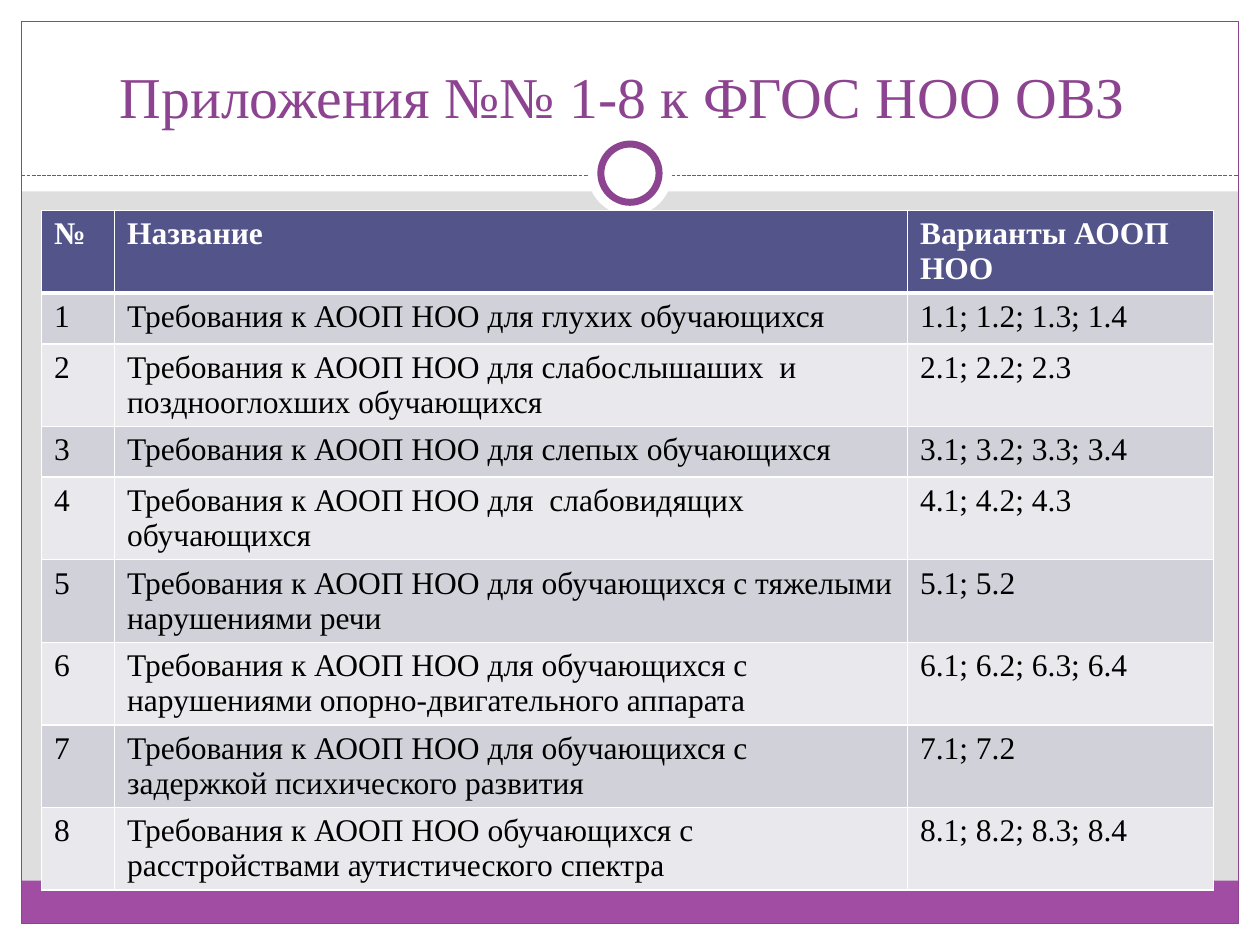
import pptx
import pptx.dml.color
import pptx.enum.dml
import pptx.enum.shapes
import pptx.enum.text
import pptx.oxml.ns
import pptx.util
import lxml.etree

WIDTH, HEIGHT, MARGIN = 10, 7.5, 0.17
FONT = "Times New Roman"
SHORT_ROW, TALL_ROW = 29, 47.2
COLORS = {
    "background": "DEDEDE",
    "white": "FFFFFF",
    "black": "000000",
    "frame": "8D4490",
    "footer": "A04DA3",
    "header": "53548A",
    "odd": "D1D1DA",
    "even": "E9E9ED",
}
TITLE = "Приложения №№ 1-8 к ФГОС НОО ОВЗ "
HEADINGS = ("№", "Название", "Варианты АООП НОО")
REQUIREMENT = "Требования к АООП НОО "
APPENDICES = (
    ("для глухих обучающихся", 4),
    ("для слабослышаших  и позднооглохших обучающихся", 3),
    ("для слепых обучающихся", 4),
    ("для  слабовидящих обучающихся", 3),
    ("для обучающихся с тяжелыми нарушениями речи", 2),
    ("для обучающихся с нарушениями опорно-двигательного аппарата", 4),
    ("для обучающихся с задержкой психического развития", 2),
    ("обучающихся с расстройствами аутистического спектра", 4),
)
SHORT_ROWS = (1, 3)


def color(name):
    """Return the named colour of the palette."""
    return pptx.dml.color.RGBColor.from_string(COLORS[name])


def inches(box):
    """Convert lengths in inches to slide units."""
    return [pptx.util.Inches(length) for length in box]


def add_shape(page, kind, box, fill=None, line=None, weight=0.75):
    """Add a flat preset shape with optional fill and outline."""
    shape = page.shapes.add_shape(kind, *inches(box))
    shape.shadow.inherit = False
    if fill:
        shape.fill.solid()
        shape.fill.fore_color.rgb = color(fill)
    else:
        shape.fill.background()
    if line:
        shape.line.color.rgb = color(line)
        shape.line.width = pptx.util.Pt(weight)
    else:
        shape.line.fill.background()


def style_text(frame, size, shade, bold=False):
    """Format every run of a text frame."""
    for para in frame.paragraphs:
        for span in para.runs:
            span.font.name = FONT
            span.font.size = pptx.util.Pt(size)
            span.font.bold = bold
            span.font.color.rgb = color(shade)


def add_frame(page, box, band, footer):
    """Draw the white margins, the footer bar and the outline."""
    left, top, width, height = box
    rectangle = pptx.enum.shapes.MSO_SHAPE.RECTANGLE
    inner = (left + MARGIN, top + MARGIN, width - 2 * MARGIN, height - 2 * MARGIN)
    bottom = top + height - MARGIN
    for part in (
        (left, bottom, width, MARGIN),
        (left, top, width, band),
        (left, top, MARGIN, height),
        (left + width - MARGIN, top, MARGIN, height),
    ):
        add_shape(page, rectangle, part, "white")
    add_shape(page, rectangle, (inner[0], bottom - footer, inner[2], footer), "footer")
    add_shape(page, rectangle, inner, line="frame")


def add_divider(page, box):
    """Draw a dashed rule with a ring centred just above its middle."""
    left, top, width, height = box
    rule = page.shapes.add_connector(
        pptx.enum.shapes.MSO_CONNECTOR.STRAIGHT,
        *inches((left, top + height / 2, left + width, top + height / 2)),
    )
    rule.line.color.rgb = color("frame")
    rule.line.width = pptx.util.Pt(0.75)
    rule.line.dash_style = pptx.enum.dml.MSO_LINE.SQUARE_DOT
    properties = rule.element.find(pptx.oxml.ns.qn("p:spPr"))
    lxml.etree.SubElement(properties, pptx.oxml.ns.qn("a:effectLst"))
    for size, line in ((height, None), (height * 0.69, "frame")):
        ring = (left + (width - size) / 2, top + (height - size) / 2 - 0.02, size, size)
        add_shape(page, pptx.enum.shapes.MSO_SHAPE.OVAL, ring, "white", line, 4)


def add_title(page, box):
    """Place the centred title on the bottom of its box."""
    frame = page.shapes.add_textbox(*inches(box)).text_frame
    frame.word_wrap = True
    frame.vertical_anchor = pptx.enum.text.MSO_ANCHOR.BOTTOM
    frame.text = TITLE
    frame.paragraphs[0].alignment = pptx.enum.text.PP_ALIGN.CENTER
    style_text(frame, 33, "frame")


def add_borders(cell, weights):
    """Insert white cell borders ahead of the cell's fill."""
    properties = cell._tc.get_or_add_tcPr()
    for position, (side, weight) in enumerate(weights.items()):
        border = lxml.etree.Element(
            pptx.oxml.ns.qn(f"a:ln{side}"), w=str(pptx.util.Pt(weight))
        )
        fill = lxml.etree.SubElement(border, pptx.oxml.ns.qn("a:solidFill"))
        lxml.etree.SubElement(
            fill, pptx.oxml.ns.qn("a:srgbClr"), val=COLORS["white"]
        )
        properties.insert(position, border)


def add_appendices(page, box, shares):
    """Build the table of appendices with alternating row fills."""
    rows = [HEADINGS]
    for number, (group, count) in enumerate(APPENDICES, 1):
        variants = "; ".join(f"{number}.{item}" for item in range(1, count + 1))
        rows.append((str(number), REQUIREMENT + group, variants))
    table = page.shapes.add_table(len(rows), len(shares), *inches(box)).table
    for column, share in zip(table.columns, shares):
        column.width = pptx.util.Inches(box[2] * share / sum(shares))
    for row, texts in enumerate(rows):
        height = SHORT_ROW if row in SHORT_ROWS else TALL_ROW
        table.rows[row].height = pptx.util.Pt(height)
        shade = "header" if row == 0 else "odd" if row % 2 else "even"
        weights = {"L": 1, "R": 1, "T": 3 if row == 1 else 1, "B": 1 if row else 3}
        for column, text in enumerate(texts):
            cell = table.cell(row, column)
            cell.text_frame.text = text
            cell.margin_bottom = 0
            style_text(cell.text_frame, 18, "black" if row else "white", row == 0)
            cell.fill.solid()
            cell.fill.fore_color.rgb = color(shade)
            add_borders(cell, weights)


def main():
    """Build the slide and save the deck."""
    deck = pptx.Presentation()
    deck.slide_width, deck.slide_height = inches((WIDTH, HEIGHT))
    page = deck.slides.add_slide(deck.slide_layouts[6])
    page.background.fill.solid()
    page.background.fill.fore_color.rgb = color("background")
    add_frame(page, (0, 0, WIDTH, HEIGHT), 1.52, 0.34)
    add_divider(page, (MARGIN, 1.06, WIDTH - 2 * MARGIN, 0.67))
    add_title(page, (0.33, HEIGHT / 30, WIDTH * 14 / 15, HEIGHT / 9))
    add_appendices(page, (0.33, 1.67, 9.3, 5.39), (0.58, 6.3, 2.43))
    deck.save("out.pptx")


if __name__ == "__main__":
    main()
